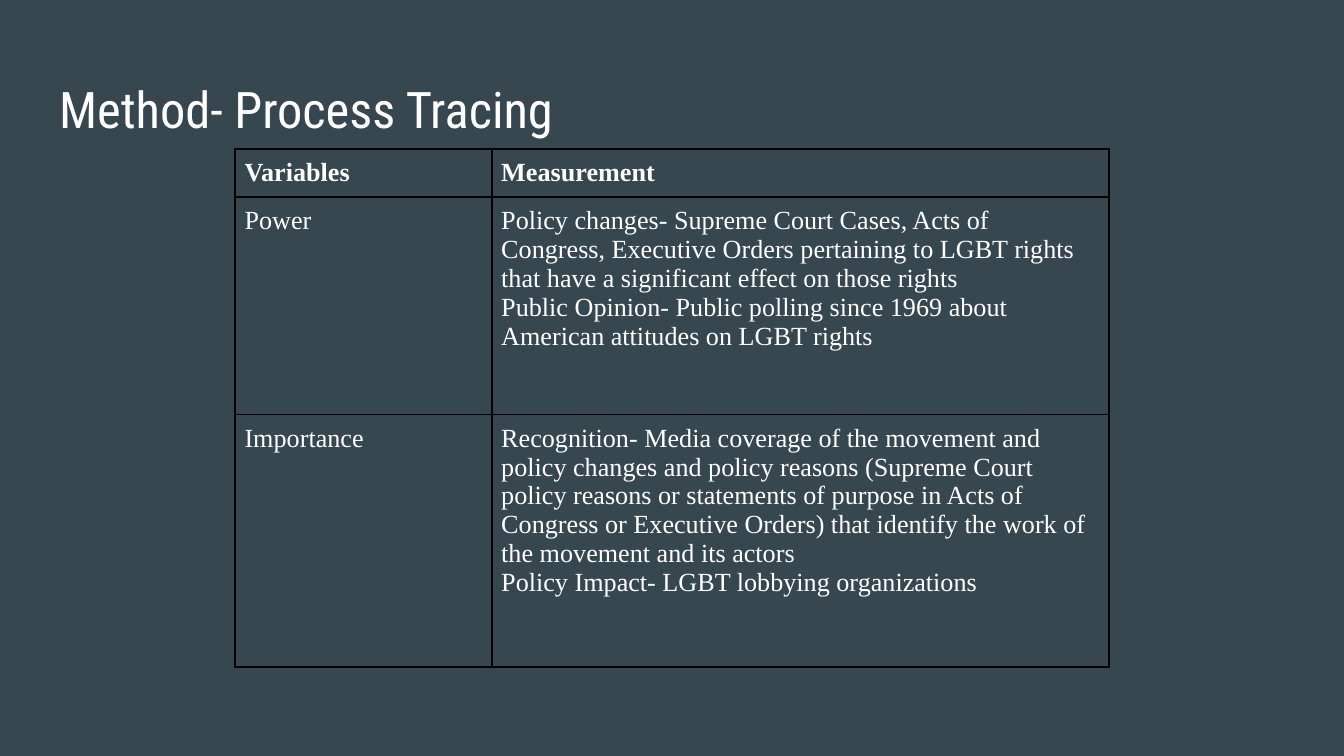
from dataclasses import dataclass

from lxml.etree import SubElement
from pptx import Presentation
from pptx.dml.color import RGBColor
from pptx.enum.text import MSO_ANCHOR as Anchor, PP_ALIGN as Align
from pptx.oxml.ns import qn
from pptx.util import Inches, Pt

# A 16:9 page
WIDTH = Inches(10)
HEIGHT = WIDTH * 9 // 16
COLORS = {"background": "37474F", "text": "FFFFFF", "border": "000000"}
TITLE_FONT, TABLE_FONT = "Roboto Condensed", "Times New Roman"
COLUMNS = (1.91, 4.59)


@dataclass(frozen=True)
class Row:
    height: float
    variable: str
    measurement: tuple[str, ...]
    bold: bool = False


ROWS = (
    Row(0.35, "Variables", ("Measurement",), bold=True),
    Row(1.62, "Power", (
        "Policy changes- Supreme Court Cases, Acts of Congress, Executive Orders "
        "pertaining to LGBT rights that have a significant effect on those rights",
        "Public Opinion- Public polling since 1969 about American attitudes on LGBT rights",
    )),
    Row(1.88, "Importance", (
        "Recognition- Media coverage of the movement and policy changes and policy "
        "reasons (Supreme Court policy reasons or statements of purpose in Acts of "
        "Congress or Executive Orders) that identify the work of the movement and its actors",
        "Policy Impact- LGBT lobbying organizations",
    )),
)


def add_span(para, text: str, font: str, size: float, bold: bool = False) -> None:
    para.alignment = Align.LEFT
    span = para.add_run()
    span.text = text
    span.font.name = font
    span.font.size = Pt(size)
    span.font.bold = bold
    span.font.color.rgb = RGBColor.from_string(COLORS["text"])


def set_margins(target, inches: float) -> None:
    for side in ("left", "right", "top", "bottom"):
        setattr(target, f"margin_{side}", Inches(inches))


def add_borders(cell) -> None:
    properties = cell._tc.get_or_add_tcPr()
    for edge in ("lnL", "lnR", "lnT", "lnB"):
        line = SubElement(properties, qn(f"a:{edge}"), w=str(Pt(1)))
        fill = SubElement(line, qn("a:solidFill"))
        SubElement(fill, qn("a:srgbClr"), val=COLORS["border"])


def fill_cell(cell, texts: tuple[str, ...], bold: bool) -> None:
    set_margins(cell, 0.07)
    cell.vertical_anchor = Anchor.TOP
    add_borders(cell)
    cell.fill.background()
    frame = cell.text_frame
    for index, text in enumerate(texts):
        para = frame.add_paragraph() if index else frame.paragraphs[0]
        add_span(para, text, TABLE_FONT, 14, bold)


def format_title(title, text: str) -> None:
    title.left, title.top = Inches(0.34), Inches(0.49)
    title.width, title.height = WIDTH - 2 * title.left, Inches(0.63)
    frame = title.text_frame
    set_margins(frame, 0.1)
    frame.word_wrap = True
    frame.vertical_anchor = Anchor.MIDDLE
    add_span(frame.paragraphs[0], text, TITLE_FONT, 27)


def add_variables_table(slide) -> None:
    width = Inches(sum(COLUMNS))
    height = Inches(sum(row.height for row in ROWS))
    table = slide.shapes.add_table(
        len(ROWS), len(COLUMNS), (WIDTH - width) // 2, Inches(1.11), width, height
    ).table
    table.first_row = table.horz_banding = False
    for column, inches in zip(table.columns, COLUMNS):
        column.width = Inches(inches)
    for index, row in enumerate(ROWS):
        table.rows[index].height = Inches(row.height)
        fill_cell(table.cell(index, 0), (row.variable,), row.bold)
        fill_cell(table.cell(index, 1), row.measurement, row.bold)


def main() -> None:
    deck = Presentation()
    deck.slide_width, deck.slide_height = WIDTH, HEIGHT

    # Page and background
    page = deck.slides.add_slide(deck.slide_layouts[5])
    page.background.fill.solid()
    page.background.fill.fore_color.rgb = RGBColor.from_string(COLORS["background"])

    # Title and table
    format_title(page.shapes.title, "Method- Process Tracing")
    add_variables_table(page)

    deck.save("out.pptx")


if __name__ == "__main__":
    main()
